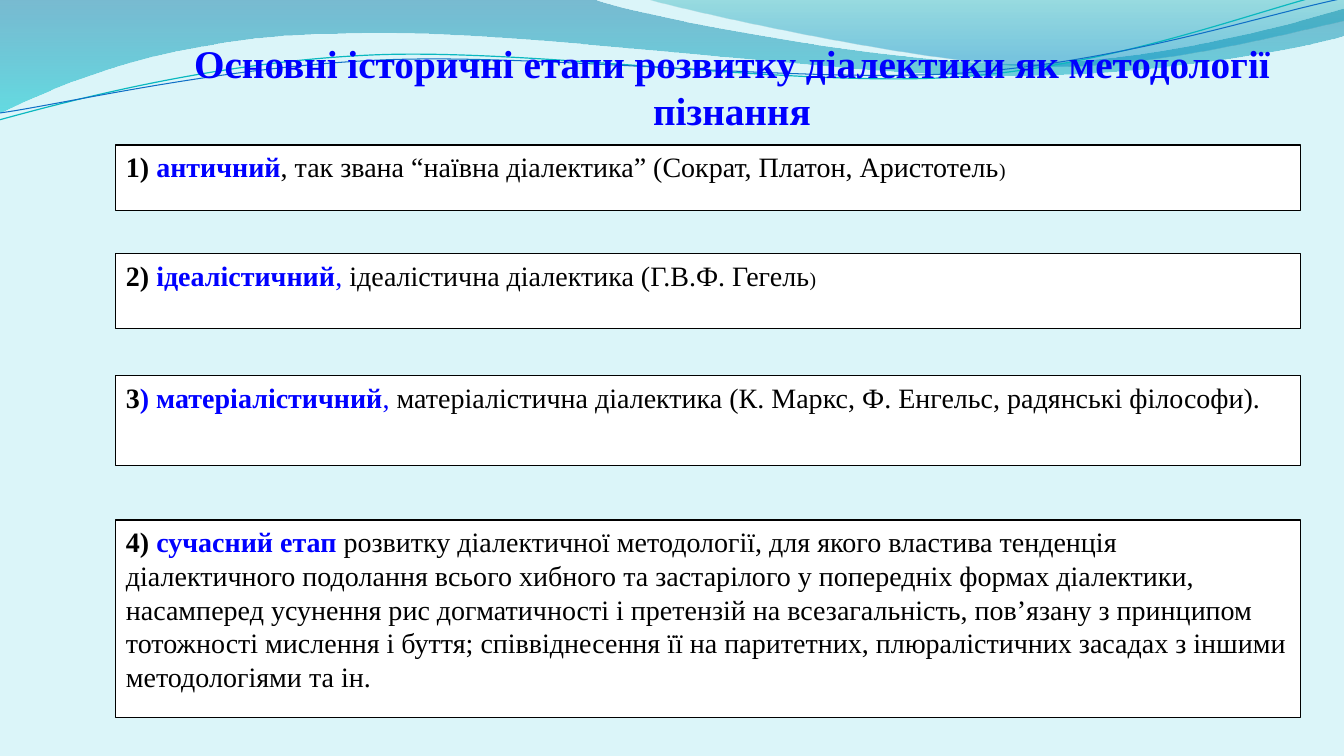
"""Build a slide on the historical stages of dialectics."""
from dataclasses import dataclass

from lxml import etree
from pptx import Presentation
from pptx.dml.color import RGBColor
from pptx.enum import shapes, text
from pptx.oxml import ns
from pptx import util as u

SCALE = 12192000 / 1344


@dataclass(frozen=True)
class Theme:
    """Hold the colours, font and type sizes of the slide."""
    font: str = "Times New Roman"
    title_size: int = 28
    body_size: int = 20
    small_size: int = 14
    background: str = "DBF5F9"
    panel: str = "FFFFFF"
    ink: str = "000000"
    accent: str = "0000FF"
    wide_wave: tuple = ((0, "0074A1", 45), (1, "00C6CF", 55))
    right_wave: tuple = ((0, "00A1A9", 30), (0.8, "008BBF", 45))
    teal_line: str = "0AB8BF"
    blue_line: str = "0F6FC6"


THEME = Theme()

WIDE_WAVE = [(0, -1), (592, -1), (639, 17, 892, 64, 1019, 64),
             (1147, 64, 1288, 26, 1344, 9), (1346, 36),
             (1322, 44, 1169, 77, 1002, 76), (836, 76, 513, 28, 346, 34),
             (173, 35, 61, 84, -1, 114), (0, -1)]
RIGHT_WAVE = [(644, -1), (684, 11, 916, 62, 1033, 66),
              (1150, 70, 1292, 32, 1344, 21), (1344, 0), (644, -1)]
TEAL_LINE = [(-1, 120), (65, 102, 213, 62, 372, 55),
             (531, 48, 796, 88, 958, 77), (1119, 66, 1262, 8, 1342, -10)]
BLUE_LINE = [(0, 113), (64, 104, 220, 67, 381, 60),
             (541, 53, 802, 84, 963, 73), (1124, 62, 1265, 14, 1345, -2)]

PLAIN = (THEME.ink, False, THEME.body_size)
SMALL = (THEME.ink, False, THEME.small_size)
NUMBER = (THEME.ink, True, THEME.body_size)
TERM = (THEME.accent, True, THEME.body_size)
COMMA = (THEME.accent, False, THEME.body_size)
HEADING = (THEME.accent, True, THEME.title_size)

TITLE = "Основні історичні етапи розвитку діалектики як методології пізнання"
STAGES = [
    (145, 66, [("1) ", NUMBER), ("античний", TERM),
               (", так звана “наївна діалектика” (Сократ, Платон, Аристотель", PLAIN),
               (")", SMALL)]),
    (254, 75, [("2) ", NUMBER), ("ідеалістичний", TERM), (", ", COMMA),
               ("ідеалістична діалектика (Г.В.Ф. Гегель", PLAIN), (")", SMALL)]),
    (376, 90, [("3", NUMBER), (") матеріалістичний", TERM), (", ", COMMA),
               ("матеріалістична діалектика (К. Маркс, Ф. Енгельс, "
                "радянські філософи).", PLAIN)]),
    (520, 198, [("4) ", NUMBER), ("сучасний етап ", TERM),
                ("розвитку діалектичної методології, для якого властива тенденція "
                 "діалектичного подолання всього хибного та застарілого у попередніх "
                 "формах діалектики, насамперед усунення рис догматичності і претензій "
                 "на всезагальність, пов’язану з принципом тотожності мислення і буття; "
                 "співвіднесення її на паритетних, плюралістичних засадах з іншими "
                 "методологіями та ін.", PLAIN)]),
]


def px(value):
    """Turn pixels into EMU."""
    return u.Emu(round(value * SCALE))


def rgb(code):
    """Turn a hex code into a colour."""
    return RGBColor.from_string(code)


def bend(outline, segments):
    """Join each three lines of a curved segment into one cubic curve."""
    lines = iter(list(outline.element.iter(ns.qn("a:lnTo"))))
    for segment in segments[1:]:
        first = next(lines)
        if len(segment) == 6:
            curve = etree.Element(ns.qn("a:cubicBezTo"))
            first.addprevious(curve)
            for line in (first, next(lines), next(lines)):
                curve.append(line[0])
                line.getparent().remove(line)


def add_outline(page, segments, close):
    """Add a freeform made of straight and curved segments."""
    corners = [(px(segment[i]), px(segment[i + 1]))
               for segment in segments for i in range(0, len(segment), 2)]
    builder = page.shapes.build_freeform(*corners[0])
    builder.add_line_segments(corners[1:], close=close)
    outline = builder.convert_to_shape()
    outline.shadow.inherit = False
    bend(outline, segments)
    return outline


def add_wave(page, segments, stops):
    """Add a wave with a translucent vertical gradient."""
    wave = add_outline(page, segments, True)
    wave.line.fill.background()
    wave.fill.gradient()
    wave.fill.gradient_angle = 270
    for stop, (position, colour, _) in zip(wave.fill.gradient_stops, stops):
        stop.position = position
        stop.color.rgb = rgb(colour)
    colours = wave.element.spPr.iter(ns.qn("a:srgbClr"))
    for node, (_, _, opacity) in zip(list(colours), stops):
        etree.SubElement(node, ns.qn("a:alpha"), val=str(opacity * 1000))


def add_curve(page, segments, colour, width):
    """Add a thin open curve."""
    curve = add_outline(page, segments, False)
    curve.fill.background()
    curve.line.color.rgb = rgb(colour)
    curve.line.width = u.Pt(width)


def add_spans(para, spans):
    """Fill a paragraph run by run."""
    for words, (colour, bold, size) in spans:
        span = para.add_run()
        span.text = words
        span.font.name = THEME.font
        span.font.size = u.Pt(size)
        span.font.bold = bold
        span.font.color.rgb = rgb(colour)


def set_frame(box, align):
    """Wrap text from the top and return the first paragraph."""
    frame = box.text_frame
    frame.word_wrap = True
    frame.auto_size = text.MSO_AUTO_SIZE.NONE
    frame.vertical_anchor = text.MSO_ANCHOR.TOP
    para = frame.paragraphs[0]
    para.alignment = align
    return para


def place_title(page):
    """Set the title above the waves."""
    title = page.shapes.title
    title.left, title.top, title.width, title.height = map(px, (183, 34, 1098, 152))
    add_spans(set_frame(title, text.PP_ALIGN.CENTER), [(TITLE, HEADING)])
    title.element.getparent().append(title.element)


def add_stage(page, top, height, spans):
    """Add one framed stage."""
    box = page.shapes.add_shape(shapes.MSO_SHAPE.RECTANGLE,
                                *map(px, (116, top, 1185, height)))
    box.shadow.inherit = False
    box.fill.solid()
    box.fill.fore_color.rgb = rgb(THEME.panel)
    box.line.color.rgb = rgb(THEME.ink)
    box.line.width = u.Pt(0.75)
    add_spans(set_frame(box, text.PP_ALIGN.LEFT), spans)


def main():
    """Build and save the deck."""
    deck = Presentation()
    deck.slide_width, deck.slide_height = px(1344), px(756)
    page = deck.slides.add_slide(deck.slide_layouts[5])
    page.background.fill.solid()
    page.background.fill.fore_color.rgb = rgb(THEME.background)
    add_wave(page, WIDE_WAVE, THEME.wide_wave)
    add_wave(page, RIGHT_WAVE, THEME.right_wave)
    add_curve(page, TEAL_LINE, THEME.teal_line, 0.85)
    add_curve(page, BLUE_LINE, THEME.blue_line, 0.75)
    place_title(page)
    for top, height, spans in STAGES:
        add_stage(page, top, height, spans)
    deck.save("out.pptx")


if __name__ == "__main__":
    main()
